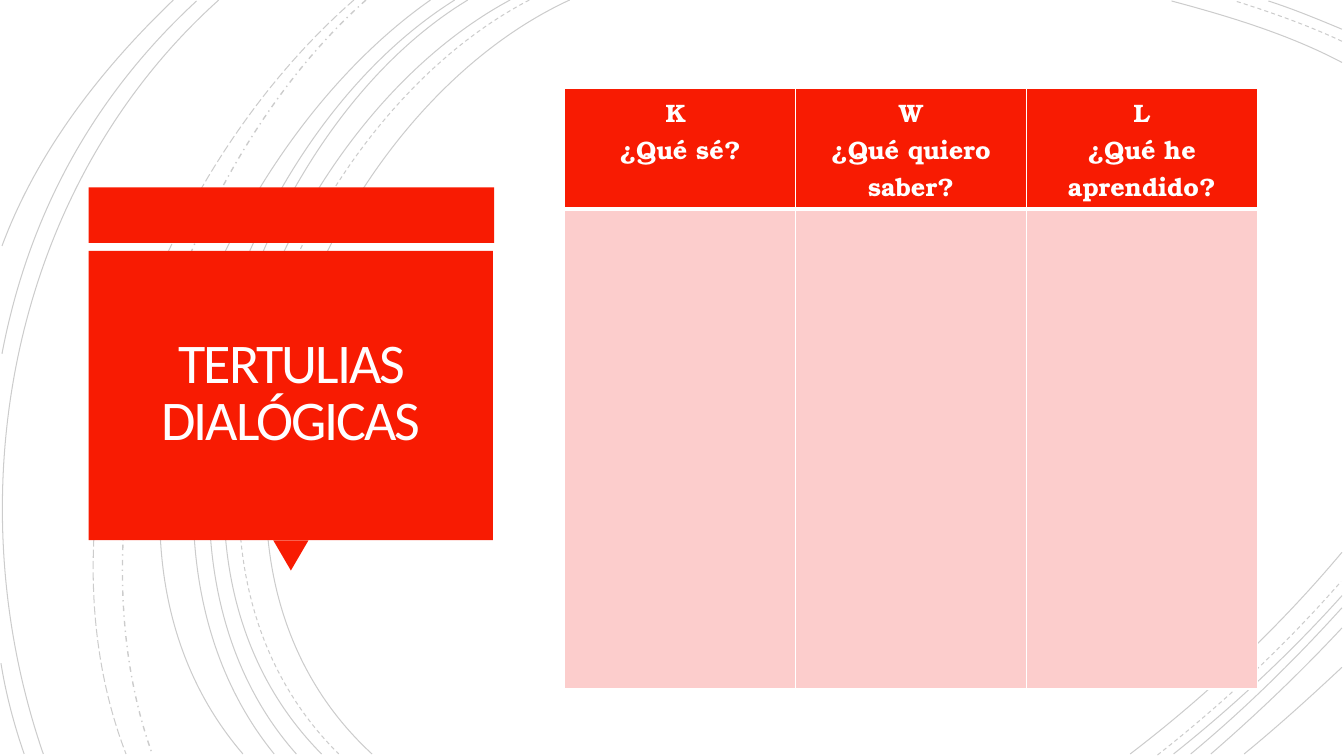
from lxml import etree
from pptx import Presentation
from pptx.dml.color import RGBColor
from pptx.enum import dml, shapes, text
from pptx.oxml import ns
from pptx.util import Inches, Pt

RED = RGBColor(0xF8, 0x1B, 0x02)
PINK = RGBColor(0xFC, 0xCD, 0xCC)
WHITE = RGBColor(0xFF, 0xFF, 0xFF)
CREAM = RGBColor(0xFF, 0xFE, 0xFF)
BLACK = RGBColor(0, 0, 0)

SOLID, DASH = dml.MSO_LINE.SOLID, dml.MSO_LINE.DASH
DOT, LONG = dml.MSO_LINE.DASH_DOT, dml.MSO_LINE.LONG_DASH

# Each arc: dash, then start, two control points and end
ARCS = [
    (SOLID, (5.65, 0), (3.15, 1.15), (1.43, 5.4), (3.69, 7.48)),
    (SOLID, (13.31, 0.62), (12.78, 0.34), (12.18, 0.16), (11.62, 0.01)),
    (SOLID, (11.21, 7.48), (11.97, 6.9), (12.69, 6.22), (13.31, 5.48)),
    (DASH, (5.25, 0), (2.85, 1.25), (1.23, 5.37), (3.36, 7.48)),
    (DASH, (13.31, 0.41), (12.97, 0.25), (12.6, 0.12), (12.25, 0.01)),
    (DASH, (11.48, 7.49), (12.13, 6.98), (12.75, 6.4), (13.3, 5.77)),
    (SOLID, (5.06, 0), (2.7, 1.27), (1.1, 5.37), (3.19, 7.48)),
    (SOLID, (13.31, 0.29), (13.07, 0.19), (12.83, 0.09), (12.58, 0.01)),
    (SOLID, (11.64, 7.48), (12.23, 7.01), (12.8, 6.48), (13.31, 5.91)),
    (SOLID, (4.64, 0), (2.44, 1.33), (1.1, 5.41), (2.94, 7.48)),
    (SOLID, (11.81, 7.48), (12.34, 7.04), (12.84, 6.55), (13.31, 6.03)),
    (SOLID, (4.51, 0), (2.31, 1.38), (0.97, 5.33), (2.72, 7.48)),
    (SOLID, (12.01, 7.48), (12.46, 7.09), (12.9, 6.67), (13.31, 6.23)),
    (SOLID, (4.27, 0), (2.17, 1.47), (0.53, 5.29), (2.41, 7.48)),
    (SOLID, (12.34, 7.48), (12.67, 7.21), (12.99, 6.92), (13.31, 6.62)),
    (DOT, (3.63, 0), (1.76, 1.66), (0.65, 5.09), (1.51, 7.48)),
    (LONG, (3.51, 0), (1.57, 1.69), (0.29, 4.99), (1.25, 7.48)),
    (SOLID, (2.17, 0), (0.11, 1.85), (-0.46, 4.9), (0.43, 7.48)),
    (SOLID, (1.95, 0.01), (0.92, 0.96), (0.28, 2.14), (0.02, 3.51)),
    (SOLID, (0.01, 6.58), (0.06, 6.89), (0.14, 7.19), (0.24, 7.48)),
    (SOLID, (1.72, 0), (1, 0.69), (0.37, 1.5), (0.02, 2.44)),
]

HEADS = ["K \n¿Qué sé?", "W\n¿Qué quiero saber?", "L\n¿Qué he aprendido?"]


def add_arc(slide, dash, *knots):
    start, *ends = [(Inches(x), Inches(y)) for x, y in knots]
    pen = slide.shapes.build_freeform(*start)
    pen.add_line_segments(ends, close=False)
    arc = pen.convert_to_shape()
    arc.shadow.inherit = False
    arc.fill.background()
    arc.line.color.rgb = BLACK
    arc.line.width = Pt(1 if dash == DOT else 0.75)
    arc.line.dash_style = dash
    tint = arc.line._ln.find(".//" + ns.qn("a:srgbClr"))
    etree.SubElement(tint, ns.qn("a:alpha"), val="20000")
    # Turn the three segments into one Bézier curve
    legs = arc._element.xpath(".//a:lnTo")
    curve = etree.SubElement(legs[0].getparent(), ns.qn("a:cubicBezTo"))
    for leg in legs:
        curve.append(leg[0])
        leg.getparent().remove(leg)


def add_block(slide, kind, box, turn=0):
    block = slide.shapes.add_shape(kind, *map(Inches, box))
    block.rotation = turn
    block.shadow.inherit = False
    block.fill.solid()
    block.fill.fore_color.rgb = RED
    block.line.fill.background()


def set_title(slide, words):
    title = slide.shapes.title
    title.left, title.top = Inches(0.97), Inches(2.57)
    title.width, title.height = Inches(3.83), Inches(2.69)
    slide.shapes._spTree.append(title._element)  # bring to front
    frame = title.text_frame
    frame.text = words
    frame.word_wrap = True
    frame.auto_size = text.MSO_AUTO_SIZE.NONE
    frame.vertical_anchor = text.MSO_ANCHOR.MIDDLE
    frame.margin_left = frame.margin_right = Inches(0.25)
    frame.margin_top = frame.margin_bottom = Inches(0.25)
    para = frame.paragraphs[0]
    para.alignment = text.PP_ALIGN.CENTER
    para.line_spacing = 0.85
    para.font.size = Pt(40)
    para.font.name = "Calibri"
    para.font.color.rgb = CREAM
    para.runs[0]._r.get_or_add_rPr().set("spc", "-150")


def set_cell(cell, fill, widths):
    cell.fill.solid()
    cell.fill.fore_color.rgb = fill
    props = cell._tc.get_or_add_tcPr()
    for spot, (side, width) in enumerate(zip("LRTB", widths)):
        edge = etree.Element(ns.qn("a:ln" + side), w=str(Pt(width)))
        paint = etree.SubElement(edge, ns.qn("a:solidFill"))
        etree.SubElement(paint, ns.qn("a:srgbClr"), val=str(WHITE))
        props.insert(spot, edge)


def add_grid(slide):
    box = map(Inches, (5.6, 0.88, 6.87, 5.95))
    grid = slide.shapes.add_table(2, len(HEADS), *box).table
    grid.horz_banding = False
    grid.rows[0].height, grid.rows[1].height = Inches(1.19), Inches(4.76)
    for col, head in enumerate(HEADS):
        grid.columns[col].width = Inches(2.29)
        top = grid.cell(0, col)
        set_cell(top, RED, (1, 1, 1, 3))
        set_cell(grid.cell(1, col), PINK, (1, 1, 3, 1))
        top.text = head
        for para in top.text_frame.paragraphs:
            para.alignment = text.PP_ALIGN.CENTER
            para.font.size = Pt(18)
            para.font.name = "TeX Gyre Bonum"
            para.font.bold = True
            para.font.color.rgb = WHITE


def main():
    deck = Presentation()
    deck.slide_width, deck.slide_height = Inches(13.33), Inches(7.5)
    slide = deck.slides.add_slide(deck.slide_layouts[5])

    # Background arcs
    for arc in ARCS:
        add_arc(slide, *arc)

    # Title panel with its pointer
    kinds = shapes.MSO_SHAPE
    add_block(slide, kinds.RECTANGLE, (0.88, 1.86, 4.02, 0.55))
    add_block(slide, kinds.ISOSCELES_TRIANGLE, (2.71, 5.36, 0.35, 0.3), 180)
    add_block(slide, kinds.RECTANGLE, (0.88, 2.49, 4.01, 2.87))
    set_title(slide, "TERTULIAS DIALÓGICAS")

    # KWL table
    add_grid(slide)
    deck.save("out.pptx")


if __name__ == "__main__":
    main()
